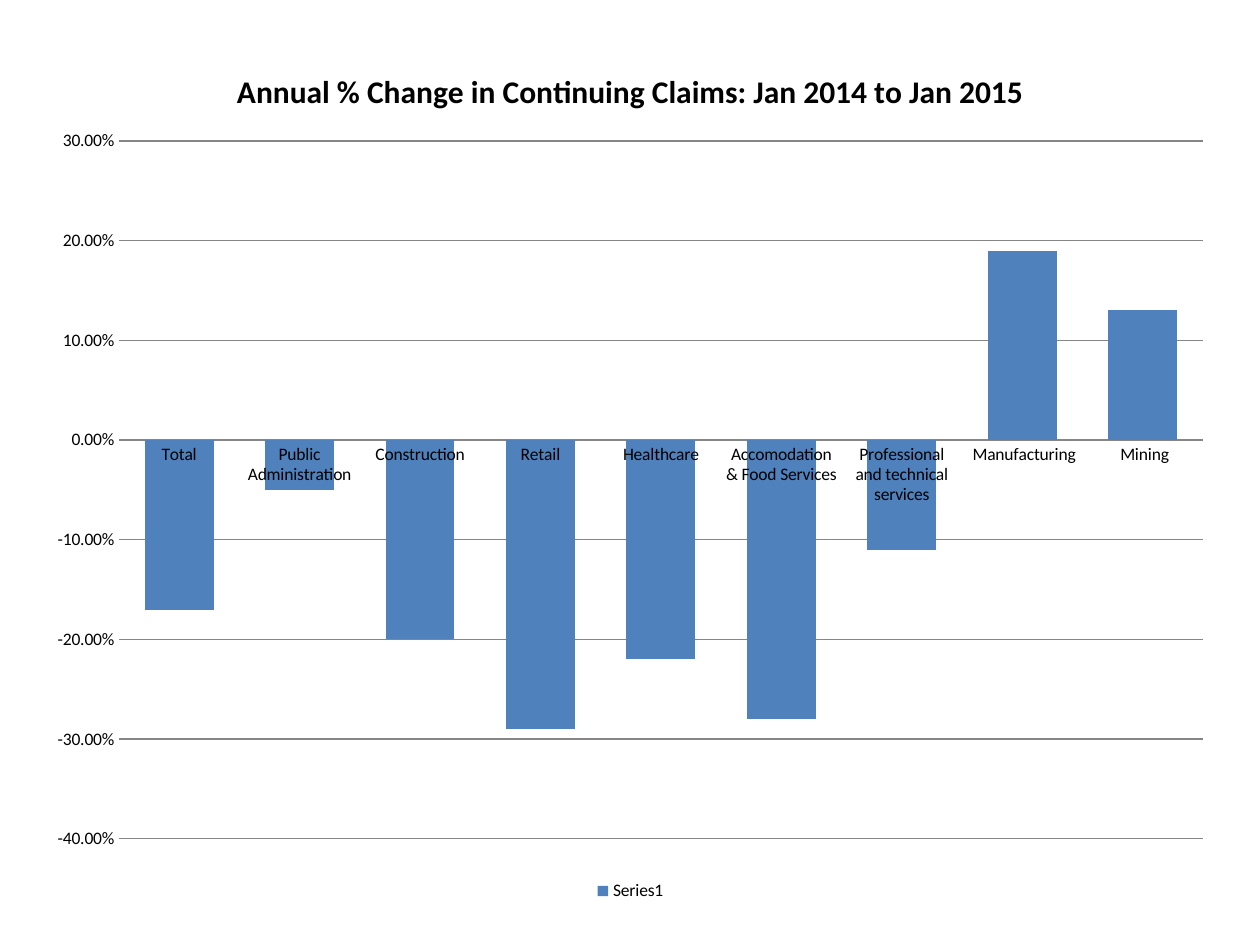
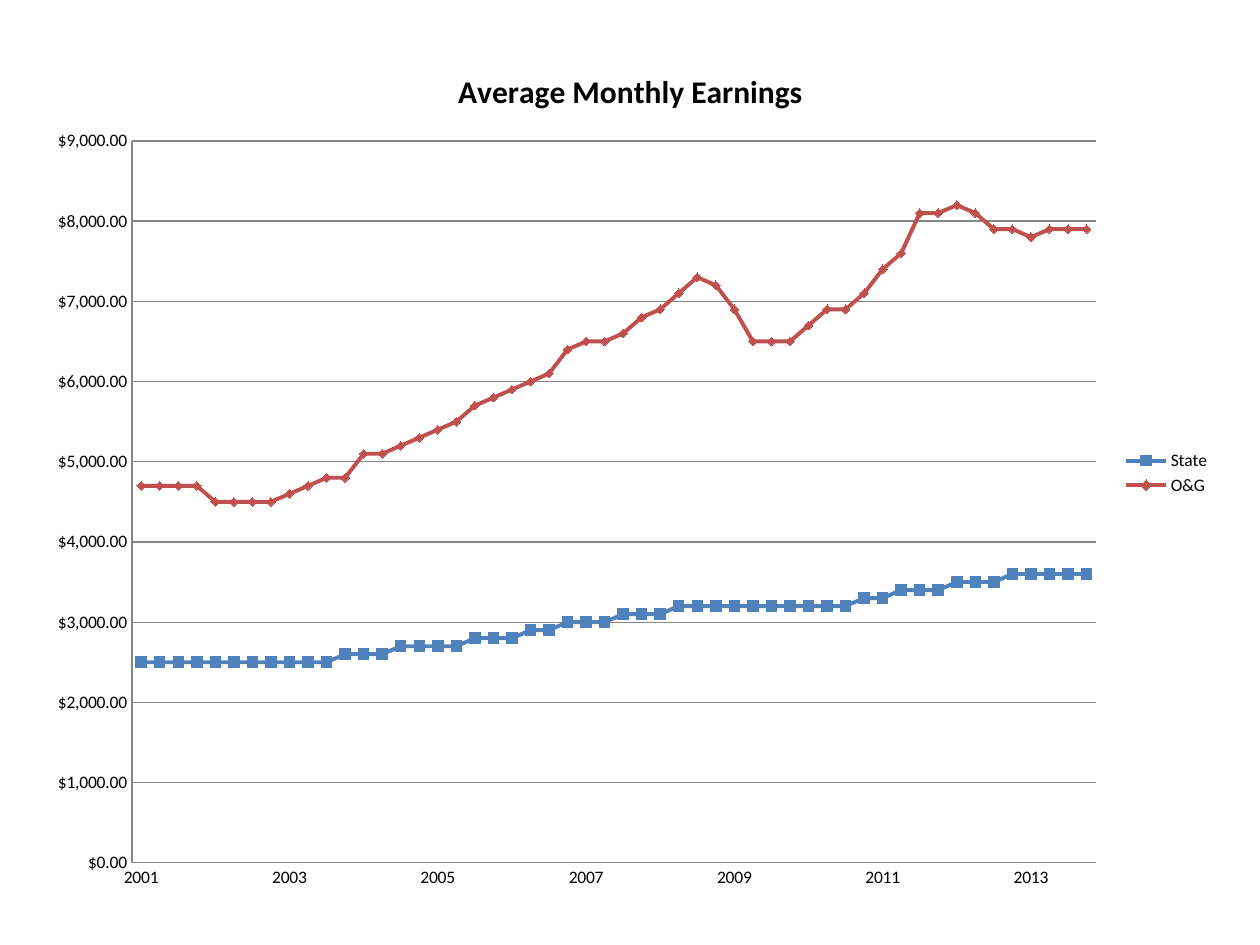
from lxml.etree import SubElement
from pptx import Presentation
from pptx.chart.data import CategoryChartData
from pptx.dml.color import RGBColor
from pptx.enum.chart import XL_CHART_TYPE, XL_LEGEND_POSITION, XL_MARKER_STYLE, XL_TICK_MARK
from pptx.oxml.ns import qn
from pptx.util import Emu, Pt

COLORS = {"state": "4F81BD", "oil_gas": "C0504D", "grid": "868686", "text": "000000"}
FONT = "Calibri"
SLIDE_SIZE = (1260, 945)
CHART_BOX = (34, 40, 1193, 866)

CLAIMS_CHANGE = {
    "Total": -0.17,
    "Public Administration": -0.05,
    "Construction": -0.2,
    "Retail": -0.29,
    "Healthcare": -0.22,
    "Accomodation & Food Services": -0.28,
    "Professional and technical services": -0.11,
    " Manufacturing": 0.19,
    " Mining": 0.13,
}

# One row of four quarters per year, from 2001 to 2013
STATE_EARNINGS = [
    2500, 2500, 2500, 2500,
    2500, 2500, 2500, 2500,
    2500, 2500, 2500, 2600,
    2600, 2600, 2700, 2700,
    2700, 2700, 2800, 2800,
    2800, 2900, 2900, 3000,
    3000, 3000, 3100, 3100,
    3100, 3200, 3200, 3200,
    3200, 3200, 3200, 3200,
    3200, 3200, 3200, 3300,
    3300, 3400, 3400, 3400,
    3500, 3500, 3500, 3600,
    3600, 3600, 3600, 3600,
]
OIL_GAS_EARNINGS = [
    4700, 4700, 4700, 4700,
    4500, 4500, 4500, 4500,
    4600, 4700, 4800, 4800,
    5100, 5100, 5200, 5300,
    5400, 5500, 5700, 5800,
    5900, 6000, 6100, 6400,
    6500, 6500, 6600, 6800,
    6900, 7100, 7300, 7200,
    6900, 6500, 6500, 6500,
    6700, 6900, 6900, 7100,
    7400, 7600, 8100, 8100,
    8200, 8100, 7900, 7900,
    7800, 7900, 7900, 7900,
]


def px(length):
    return Emu(round(length * 914400 / 126))


def rgb(name):
    return RGBColor.from_string(COLORS[name])


def style_font(font, size, bold=False):
    font.name, font.size, font.bold = FONT, Pt(size), bold
    font.color.rgb = rgb("text")


def style_line(line, color, width):
    line.color.rgb = rgb(color)
    line.width = Pt(width)


def place_plot(chart, box, plot_box):
    """Fix the inner plot area, given in slide px, as fractions of the chart box."""
    left, top, width, height = box
    fractions = {
        "x": (plot_box[0] - left) / width,
        "y": (plot_box[1] - top) / height,
        "w": plot_box[2] / width,
        "h": plot_box[3] / height,
    }
    plot_area = chart.plots[0]._element.getparent()
    for old_layout in plot_area.findall(qn("c:layout")):
        plot_area.remove(old_layout)
    layout = SubElement(plot_area, qn("c:layout"))
    plot_area.insert(0, layout)
    manual = SubElement(layout, qn("c:manualLayout"))
    settings = {"layoutTarget": "inner", "xMode": "edge", "yMode": "edge", **fractions}
    for tag, value in settings.items():
        SubElement(manual, qn(f"c:{tag}")).set("val", str(value))


def add_titled_chart(slide, box, kind, data, title, plot_box, legend_position):
    chart = slide.shapes.add_chart(kind, *map(px, box), data).chart
    style_font(chart.font, 10)

    chart.has_title = True
    chart.chart_title.include_in_layout = False
    heading = chart.chart_title.text_frame.paragraphs[0]
    heading.text = title
    style_font(heading.font, 18, bold=True)

    chart.has_legend = True
    chart.legend.position = legend_position
    chart.legend.include_in_layout = False
    style_font(chart.legend.font, 10)

    chart.plots[0].vary_by_categories = False
    place_plot(chart, box, plot_box)
    return chart


def style_axes(chart, low, high, step, number_format):
    values, categories = chart.value_axis, chart.category_axis
    values.minimum_scale, values.maximum_scale, values.major_unit = low, high, step
    values.has_major_gridlines = True
    style_line(values.major_gridlines.format.line, "grid", 0.75)
    values.tick_labels.number_format = number_format
    values.tick_labels.number_format_is_linked = False
    categories.has_major_gridlines = False
    for axis in (values, categories):
        axis.major_tick_mark = axis.minor_tick_mark = XL_TICK_MARK.NONE
        style_line(axis.format.line, "grid", 0.75)
        style_font(axis.tick_labels.font, 10)


def claims_slide(slide, box):
    data = CategoryChartData(number_format="0.00%")
    data.categories = list(CLAIMS_CHANGE)
    data.add_series("Series1", list(CLAIMS_CHANGE.values()))
    chart = add_titled_chart(
        slide, box, XL_CHART_TYPE.COLUMN_CLUSTERED, data,
        "Annual % Change in Continuing Claims: Jan 2014 to Jan 2015",
        (119, 141, 1084, 698), XL_LEGEND_POSITION.BOTTOM)
    style_axes(chart, -0.4, 0.3, 0.1, "0.00%")
    chart.value_axis.format.line.fill.background()
    # Level labels wrap inside their category
    label_body = chart.category_axis._element.find(qn("c:txPr")).find(qn("a:bodyPr"))
    label_body.set("rot", "0")

    plot = chart.plots[0]
    plot.gap_width, plot.overlap = 75, -25
    claims = plot.series[0]
    claims.invert_if_negative = False
    claims.format.fill.solid()
    claims.format.fill.fore_color.rgb = rgb("state")


def earnings_slide(slide, box):
    data = CategoryChartData(number_format='"$"#,##0.00')
    # Every second year is named at its first quarter
    data.categories = ["" if quarter % 8 else str(2001 + quarter // 4)
                       for quarter in range(len(STATE_EARNINGS))]
    data.add_series("State ", STATE_EARNINGS)
    data.add_series("O&G", OIL_GAS_EARNINGS)
    chart = add_titled_chart(
        slide, box, XL_CHART_TYPE.LINE_MARKERS, data, "Average Monthly Earnings",
        (132, 141, 964, 722), XL_LEGEND_POSITION.RIGHT)
    style_axes(chart, 0, 9000, 1000, '"$"#,##0.00')
    label_skip = SubElement(chart.category_axis._element, qn("c:tickLblSkip"))
    label_skip.set("val", "1")
    chart.category_axis._element.find(qn("c:noMultiLvlLbl")).addprevious(label_skip)

    looks = (("state", XL_MARKER_STYLE.SQUARE, 6), ("oil_gas", XL_MARKER_STYLE.DIAMOND, 5))
    for series, (color, marker_style, marker_size) in zip(chart.plots[0].series, looks):
        series.smooth = False
        style_line(series.format.line, color, 2.25)
        marker = series.marker
        marker.style, marker.size = marker_style, marker_size
        marker.format.fill.solid()
        marker.format.fill.fore_color.rgb = rgb(color)
        style_line(marker.format.line, color, 0.75)


def main():
    deck = Presentation()
    deck.slide_width, deck.slide_height = map(px, SLIDE_SIZE)
    blank_layout = deck.slide_layouts[6]
    for build in (claims_slide, earnings_slide):
        build(deck.slides.add_slide(blank_layout), CHART_BOX)
    deck.save("out.pptx")


if __name__ == "__main__":
    main()
